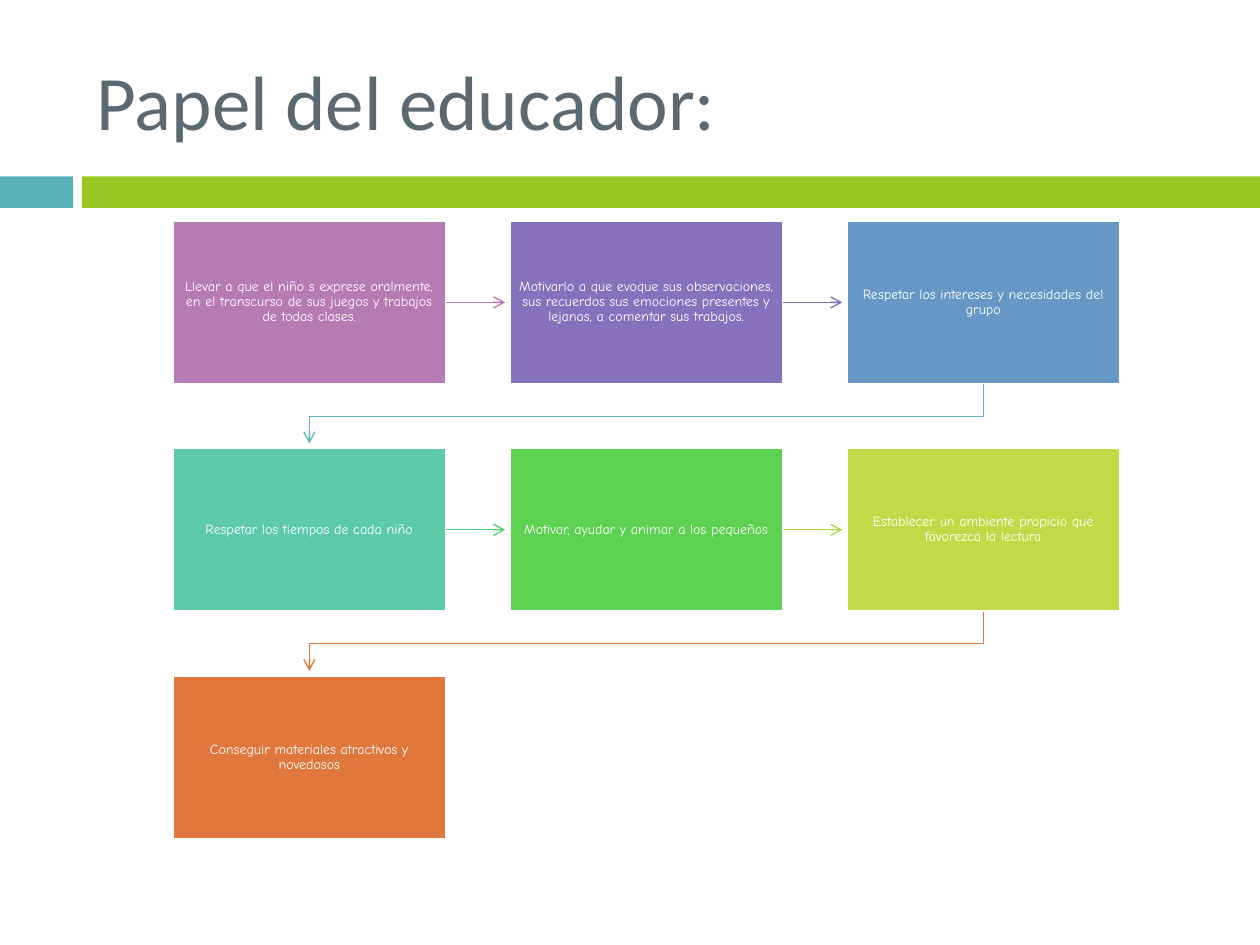
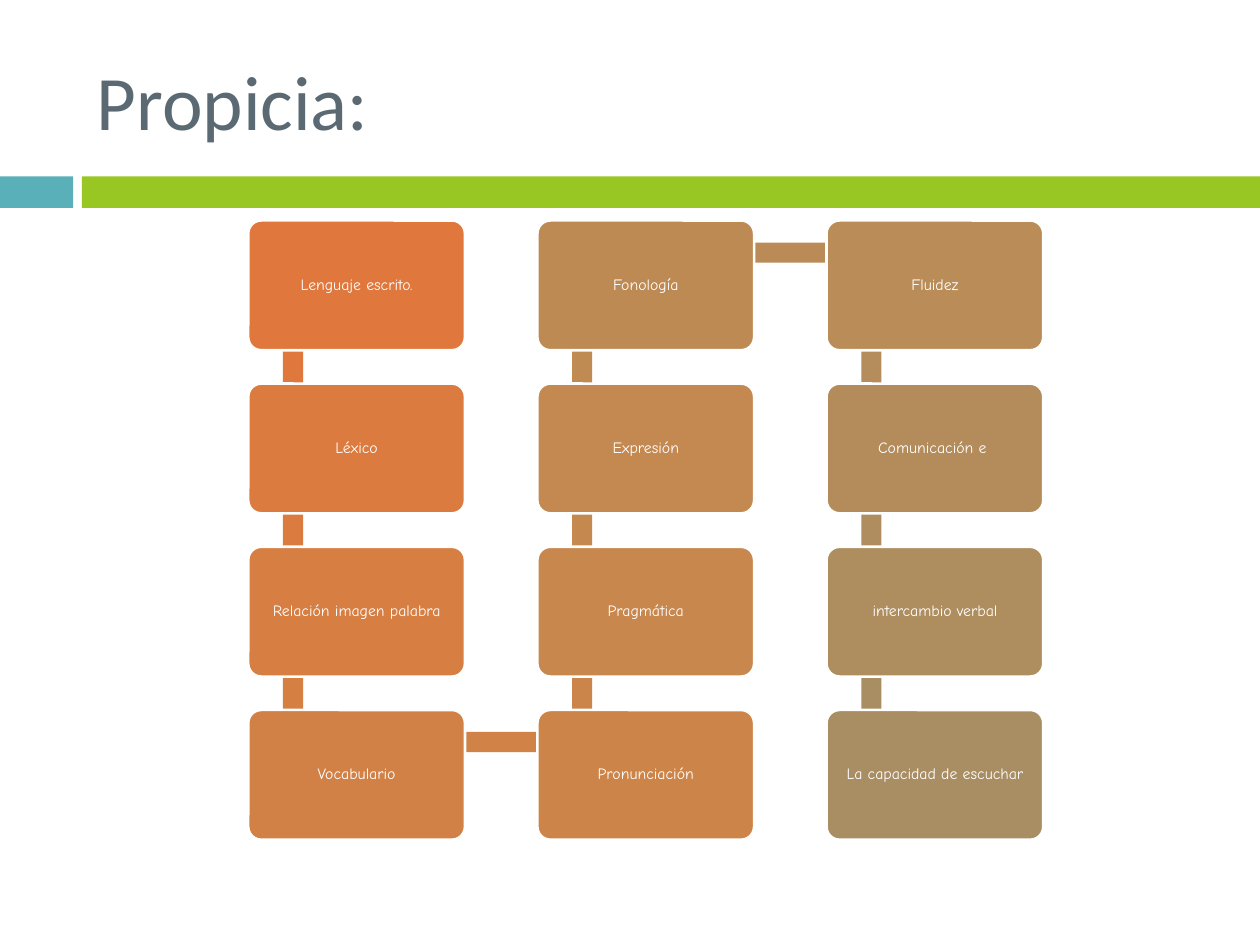
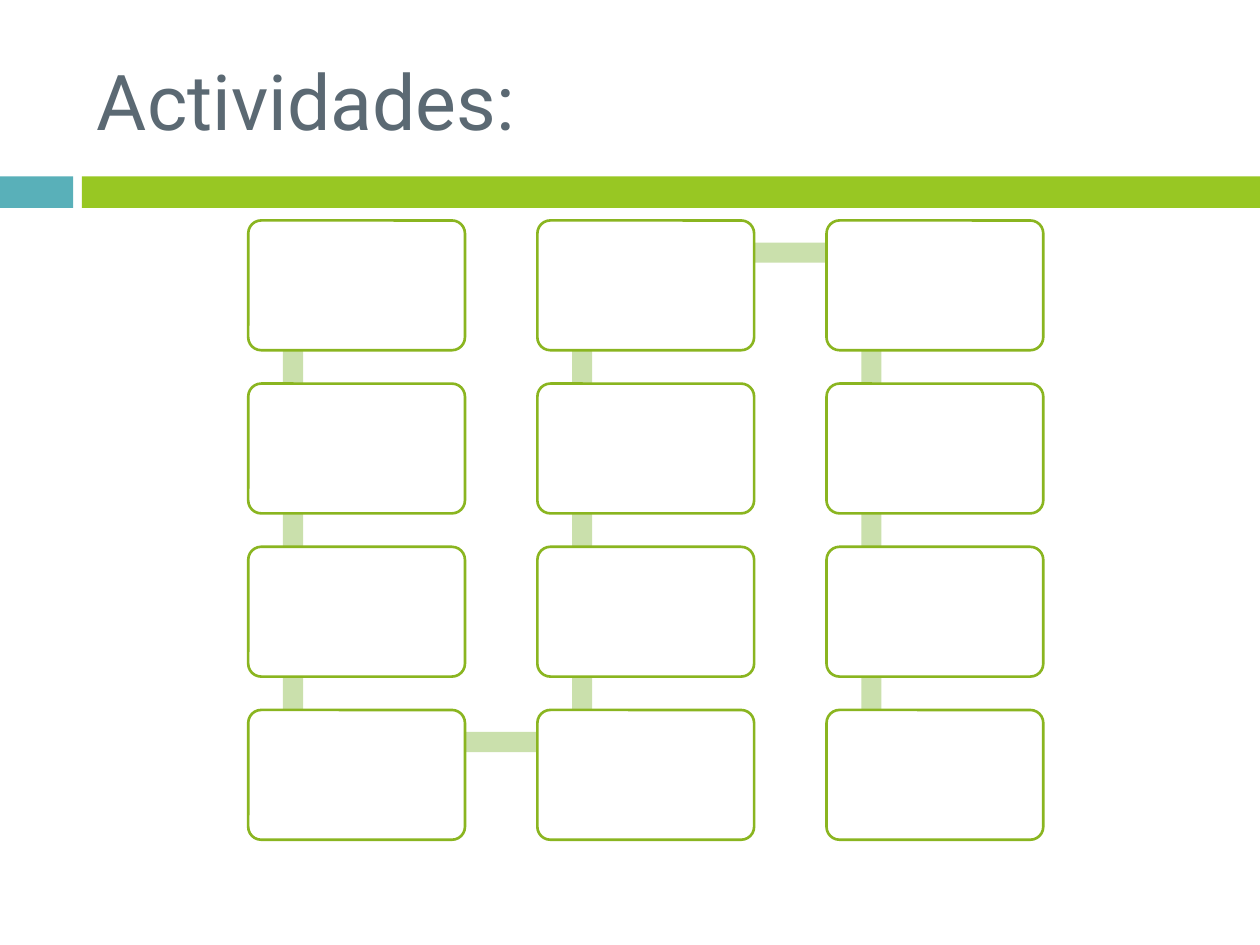
from itertools import pairwise, zip_longest
from lxml.etree import SubElement
from pptx import Presentation
from pptx.dml.color import RGBColor as Rgb
from pptx.enum.shapes import MSO_CONNECTOR as Link, MSO_SHAPE as Kind
from pptx.enum.text import MSO_ANCHOR as Anchor, PP_ALIGN as Align
from pptx.oxml.ns import qn
from pptx.util import Emu, Pt

SCALE = 4572
WHITE, TEAL, LIME, SLATE = "FFFFFF", "59B0B9", "98C723", "5B6973"
MOSS, PALE = "8AB520", "CAE0AC"
BODY = "Comic Neue"

STEPS = [
    ("Llevar a que el niño s exprese oralmente, en el transcurso de sus juegos y trabajos de todas clases.",
     "B77BB4", "B77BB4"),
    ("Motivarlo a que evoque sus observaciones, sus recuerdos sus emociones presentes y lejanas, "
     "a comentar sus trabajos.", "8671BD", "786FBE"),
    ("Respetar los intereses y necesidades del grupo", "6797C4", "63B5C6"),
    ("Respetar los tiempos de cada niño", "5DCAAA", "56CE73"),
    ("Motivar, ayudar y animar a los pequeños", "5CD152", "ADD749"),
    ("Establecer un ambiente propicio que favorezca la lectura", "C4D947", "E0773C"),
    ("Conseguir materiales atractivos y novedosos", "E0773C", None),
]
SKILLS = [
    ("Lenguaje escrito.", "E0773C", "E0773C"),
    ("Léxico", "DB7B3F", "DB7B40"),
    ("Relación imagen palabra", "D77E43", "D67F43"),
    ("Vocabulario", "D28146", "D08247"),
    ("Pronunciación", "CD8449", "CB854B"),
    ("Pragmática", "C8874D", "C5884F"),
    ("Expresión", "C38950", "C08A53"),
    ("Fonología", "BE8A54", "BA8B57"),
    ("Fluidez", "B98C58", "B58C5B"),
    ("Comunicación e ", "B48C5B", "AF8D5F"),
    ("intercambio verbal", "AE8D5F", "A98D63"),
    ("La capacidad de escuchar", "A98D63", None),
]


def px(n):
    return Emu(round(n * SCALE))


def tint(code):
    return Rgb.from_string(code)


def write(frame, text, size, font, color):
    frame.word_wrap = True
    frame.vertical_anchor = Anchor.MIDDLE
    para = frame.paragraphs[0]
    run = para.add_run()
    run.text = text
    run.font.size = Pt(size)
    run.font.name = font
    run.font.color.rgb = tint(color)
    return para


def block(slide, kind, x, y, w, h, fill, edge=None):
    shape = slide.shapes.add_shape(kind, px(x), px(y), px(w), px(h))
    shape.shadow.inherit = False
    shape.fill.solid()
    shape.fill.fore_color.rgb = tint(fill)
    if edge:
        shape.line.color.rgb = tint(edge)
        shape.line.width = Pt(1.5)
    else:
        shape.line.fill.background()
    return shape


def label(shape, text, size, inset):
    frame = shape.text_frame
    frame.margin_left = frame.margin_right = px(inset)
    frame.margin_top = frame.margin_bottom = px(inset)
    para = write(frame, text, size, BODY, WHITE)
    para.alignment = Align.CENTER
    para.line_spacing = 0.9


def start(deck, title, font="Calibri"):
    slide = deck.slides.add_slide(deck.slide_layouts[6])
    block(slide, Kind.RECTANGLE, 0, 280, 116, 50, TEAL)
    block(slide, Kind.RECTANGLE, 130, 280, 1870, 50, LIME)
    box = slide.shapes.add_textbox(px(134), px(50), px(1784), px(216))
    write(box.text_frame, title, 44, font, SLATE)
    return slide


def point(line, color):
    line.line.color.rgb = tint(color)
    line.line.width = Pt(0.79)
    prop = line.element.spPr
    SubElement(prop.find(qn("a:ln")), qn("a:tailEnd"), type="arrow")
    if prop.find(qn("a:effectLst")) is None:
        SubElement(prop, qn("a:effectLst"))


def arrow(slide, box, x, y, end, color):
    line = slide.shapes.add_connector(Link.STRAIGHT, px(x), px(y), px(end), px(y))
    line.begin_connect(box, 3)
    point(line, color)


def bend(slide, spots, color):
    first, *rest = [(px(x), px(y)) for x, y in spots]
    path = slide.shapes.build_freeform(*first)
    path.add_line_segments(rest, close=False)
    line = path.convert_to_shape()
    line.fill.background()
    line.shadow.inherit = False
    point(line, color)


def flow(slide, steps):
    left, top, wide, high = 274, 350, 434, 260
    across, down, gap, cols = 535, 361, 7, 3
    for i, (text, fill, color) in enumerate(steps):
        row, col = divmod(i, cols)
        x, y = left + col * across, top + row * down
        box = block(slide, Kind.RECTANGLE, x, y, wide, high, fill, WHITE)
        label(box, text, 8, 12)
        if not color:
            continue
        if col < cols - 1:
            arrow(slide, box, x + wide, y + high // 2, x + across - gap, color)
        else:
            mid, home, turn = x + wide // 2, left + wide // 2, y + high + 51
            bend(slide, [(mid, y + high), (mid, turn), (home, turn), (home, y + down - gap)], color)


def snake(cols=3, rows=4):
    for col in range(cols):
        for row in range(rows):
            yield 394 + col * 459, 350 + (rows - 1 - row if col % 2 else row) * 259


def bar(slide, here, there, color):
    (x, y), (x2, y2) = here, there
    long, thick = max(abs(x2 - x), abs(y2 - y)), 32
    mid, level = (x + x2) / 2 + 71, (y + y2) / 2 + 51
    shape = block(slide, Kind.RECTANGLE, mid - long / 2, level - thick / 2, long, thick, color)
    shape.rotation = 0 if y == y2 else 90 if y2 > y else 270


def chain(slide, items, edge):
    spots = list(snake())
    for (text, fill, color), spot, pair in zip_longest(items, spots, pairwise(spots)):
        if pair:
            bar(slide, *pair, color)
        box = block(slide, Kind.ROUNDED_RECTANGLE, *spot, 344, 206, fill, edge)
        box.adjustments[0] = 0.1
        if text:
            label(box, text, 9, 8)


def main():
    deck = Presentation()
    deck.slide_width, deck.slide_height = px(2000), px(1500)
    flow(start(deck, "Papel del educador:"), STEPS)
    chain(start(deck, "Propicia:"), SKILLS, WHITE)
    chain(start(deck, "Actividades:", "Roboto"), [("", WHITE, PALE)] * 12, MOSS)
    deck.save("out.pptx")


if __name__ == "__main__":
    main()
